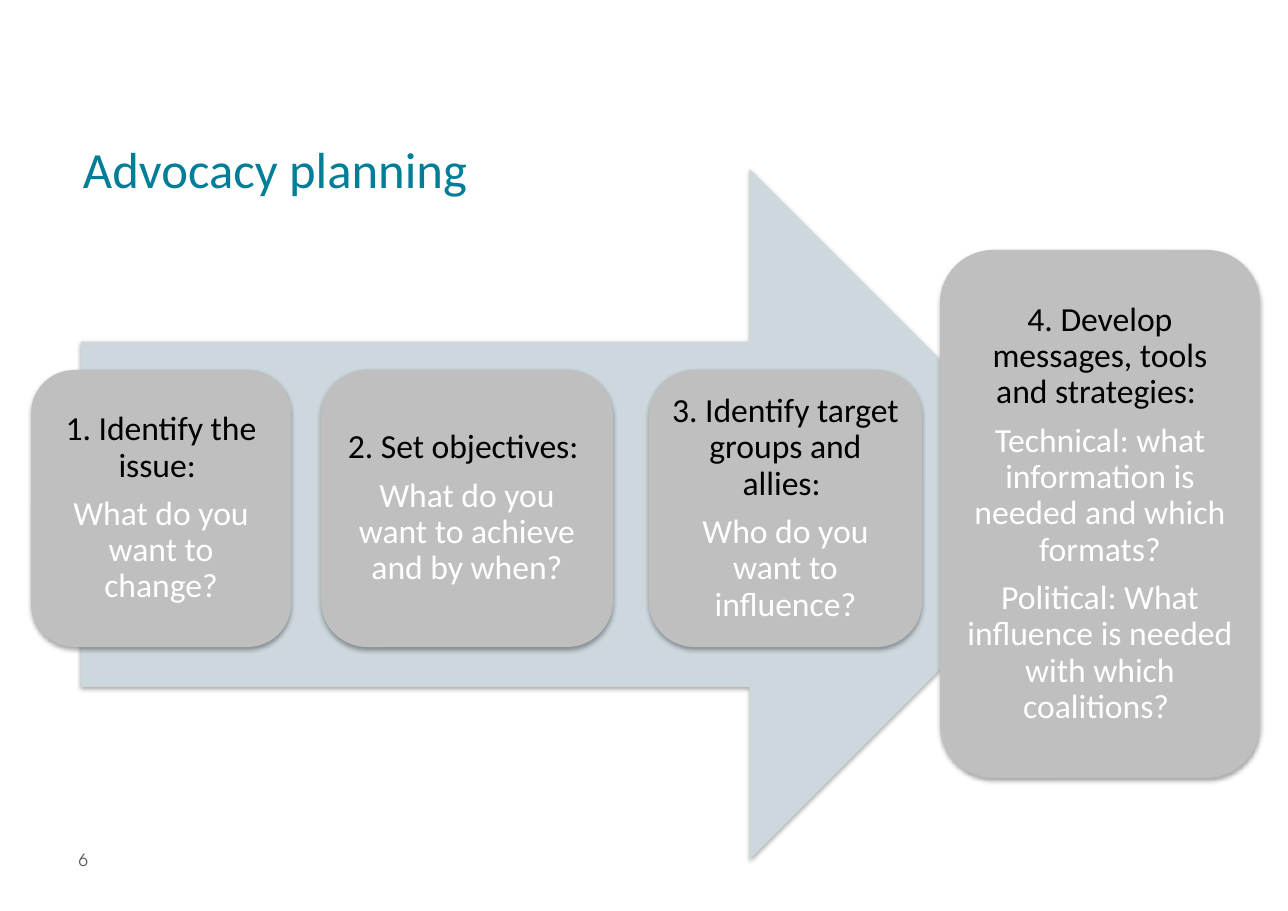
from dataclasses import dataclass

from lxml.etree import SubElement
from pptx import Presentation
from pptx.dml.color import RGBColor
from pptx.enum.shapes import MSO_SHAPE
from pptx.enum.text import MSO_ANCHOR, MSO_AUTO_SIZE, PP_ALIGN
from pptx.oxml.ns import qn
from pptx.util import Emu, Pt


@dataclass(frozen=True)
class Theme:
    """Colours, fonts and type sizes of the slide."""

    teal: RGBColor = RGBColor(0x00, 0x7E, 0x97)
    pale: RGBColor = RGBColor(0xCC, 0xD8, 0xDD)
    grey: RGBColor = RGBColor(0xBF, 0xBF, 0xBF)
    number: RGBColor = RGBColor(0x59, 0x59, 0x59)
    black: RGBColor = RGBColor(0x00, 0x00, 0x00)
    white: RGBColor = RGBColor(0xFF, 0xFF, 0xFF)
    font: str = "Calibri"
    number_font: str = "TeX Gyre Adventor"
    title_size: float = 33.1
    body_size: float = 22
    number_size: float = 11
    body_gap: float = 7.7


THEME = Theme()
EMU_PER_PX = 914400 / 110.2
STEP_TOP, STEP_HEIGHT = 370, 277
STEPS = [
    ((31, STEP_TOP, 260, STEP_HEIGHT),
     ["1. Identify the issue: ", "What do you want to change?"]),
    ((321, STEP_TOP, 292, STEP_HEIGHT),
     ["2. Set objectives: ", "What do you want to achieve and by when?"]),
    ((649, STEP_TOP, 273, STEP_HEIGHT),
     ["3. Identify target groups and allies: ", "Who do you want to influence?"]),
    ((940, 250, 320, 528),
     ["4. Develop messages, tools and strategies: ",
      "Technical: what information is needed and which formats?",
      "Political: What influence is needed with which coalitions? "]),
]


def px(length):
    """Turn pixels into EMU."""
    return Emu(round(length * EMU_PER_PX))


def set_frame(box, anchor, side=0, end=0):
    """Set wrapping, anchor and insets of a text frame."""
    frame = box.text_frame
    frame.word_wrap = True
    frame.auto_size = MSO_AUTO_SIZE.NONE
    frame.vertical_anchor = anchor
    frame.margin_left = frame.margin_right = px(side)
    frame.margin_top = frame.margin_bottom = px(end)
    return frame


def write(para, text, *, size, color, font=THEME.font, align=PP_ALIGN.LEFT,
          spacing=1.0, after=0):
    """Write formatted text into a paragraph."""
    para.alignment = align
    para.line_spacing = spacing
    para.space_before = Pt(0)
    para.space_after = Pt(after)
    span = para.add_run()
    span.text = text
    span.font.size = Pt(size)
    span.font.name = font
    span.font.color.rgb = color


def add_shadow(shape):
    """Give a shape a soft shadow straight below it."""
    shape.shadow.inherit = False
    effects = shape._element.spPr.find(qn("a:effectLst"))
    shadow = SubElement(effects, qn("a:outerShdw"), blurRad=str(Pt(3.1)),
                        dist=str(Pt(1.8)), dir="5400000", rotWithShape="0")
    color = SubElement(shadow, qn("a:srgbClr"), val=str(THEME.black))
    SubElement(color, qn("a:alpha"), val="35000")


def add_panel(page, kind, bounds, fill):
    """Add a filled shape with a shadow and no outline."""
    panel = page.shapes.add_shape(kind, *map(px, bounds))
    panel.fill.solid()
    panel.fill.fore_color.rgb = fill
    panel.line.fill.background()
    add_shadow(panel)
    return panel


def add_step(page, bounds, texts):
    """Add a rounded step with a black heading and white questions."""
    box = add_panel(page, MSO_SHAPE.ROUNDED_RECTANGLE, bounds, THEME.grey)
    frame = set_frame(box, MSO_ANCHOR.MIDDLE, 9, 9)
    for index, text in enumerate(texts):
        para = frame.add_paragraph() if index else frame.paragraphs[0]
        write(para, text, size=THEME.body_size,
              color=THEME.white if index else THEME.black,
              align=PP_ALIGN.CENTER, spacing=0.9, after=THEME.body_gap)


def add_title(page, text):
    """Place and fill the title placeholder."""
    title = page.shapes.title
    title.left, title.top, title.width, title.height = map(px, (83, 138, 1125, 125))
    frame = set_frame(title, MSO_ANCHOR.TOP)
    write(frame.paragraphs[0], text, size=THEME.title_size, color=THEME.teal)


def add_page_number(page, text):
    """Add the page number at the lower left."""
    box = page.shapes.add_textbox(*map(px, (32, 836, 68, 48)))
    frame = set_frame(box, MSO_ANCHOR.MIDDLE, 12, 7)
    write(frame.paragraphs[0], text, size=THEME.number_size, color=THEME.number,
          font=THEME.number_font, align=PP_ALIGN.RIGHT)


def main():
    """Build and save the slide."""
    deck = Presentation()
    deck.slide_width, deck.slide_height = px(1288), px(911)
    page = deck.slides.add_slide(deck.slide_layouts[5])
    add_title(page, "Advocacy planning")
    add_page_number(page, "6")
    add_panel(page, MSO_SHAPE.RIGHT_ARROW, (81, 169, 1014, 691), THEME.pale)
    for bounds, texts in STEPS:
        add_step(page, bounds, texts)
    deck.save("out.pptx")


if __name__ == "__main__":
    main()
